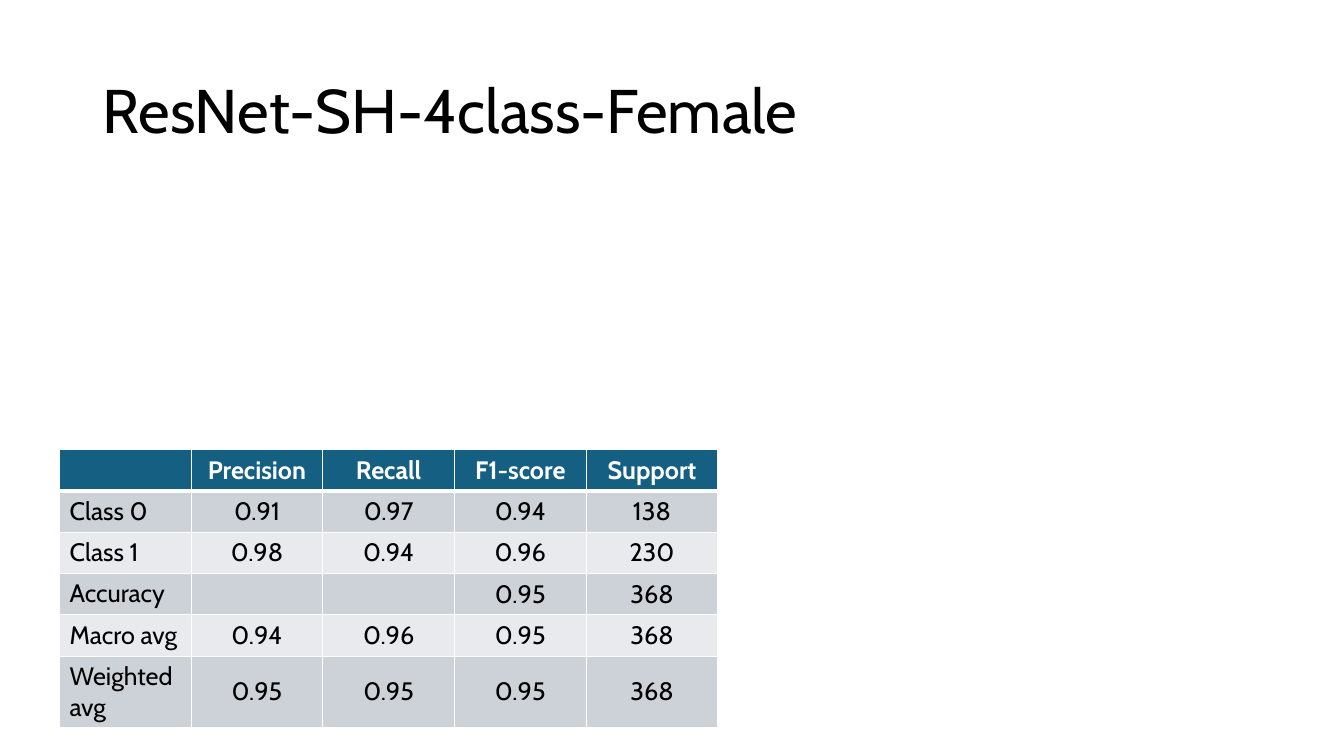
from lxml import etree
from pptx import Presentation
from pptx.dml.color import RGBColor
from pptx.enum.text import MSO_ANCHOR, MSO_AUTO_SIZE, PP_ALIGN
from pptx.oxml.ns import qn
from pptx.util import Pt

PX = 9144
LEFT, CENTER = PP_ALIGN.LEFT, PP_ALIGN.CENTER
TOP, MIDDLE = MSO_ANCHOR.TOP, MSO_ANCHOR.MIDDLE
NO_AUTOFIT = MSO_AUTO_SIZE.NONE
BLACK = RGBColor(0x00, 0x00, 0x00)
WHITE = RGBColor(0xFF, 0xFF, 0xFF)
TEAL = RGBColor(0x15, 0x60, 0x82)
GREY = RGBColor(0xCC, 0xD2, 0xD8)
PALE = RGBColor(0xE8, 0xEA, 0xED)

METRICS = [
    ["", "Precision", "Recall", "F1-score", "Support"],
    ["Class 0", "0.91", "0.97", "0.94", "138"],
    ["Class 1", "0.98", "0.94", "0.96", "230"],
    ["Accuracy", "", "", "0.95", "368"],
    ["Macro avg", "0.94", "0.96", "0.95", "368"],
    ["Weighted avg", "0.95", "0.95", "0.95", "368"],
]


def write(tf, text, font="Cabin", size=18, color=BLACK, bold=False,
          align=LEFT, spacing=1.0):
    """Write one formatted paragraph into a text frame."""
    p = tf.paragraphs[0]
    p.alignment = align
    p.line_spacing = spacing
    p.font.size = Pt(size)
    if text:
        r = p.add_run()
        r.text = text
        r.font.name = font
        r.font.size = Pt(size)
        r.font.bold = bold
        r.font.color.rgb = color


def border(cell, side, color, width):
    """Draw one edge of a table cell."""
    tcPr = cell._tc.get_or_add_tcPr()
    ln = etree.SubElement(tcPr, qn(f"a:ln{side}"), w=str(Pt(width)))
    fill = etree.SubElement(ln, qn("a:solidFill"))
    etree.SubElement(fill, qn("a:srgbClr"), val=str(color))


class Deck:
    """Hold the presentation, its style and the current slide."""

    def __init__(self, width, height):
        """Start a presentation with one title-only slide."""
        self.prs = Presentation()
        self.prs.slide_width = width * PX
        self.prs.slide_height = height * PX
        self.s = self.prs.slides.add_slide(self.prs.slide_layouts[5])

    def title(self, text, x, y, w, h):
        """Place and fill the title."""
        sp = self.s.shapes.title
        sp.left, sp.top, sp.width, sp.height = (v * PX for v in (x, y, w, h))
        tf = sp.text_frame
        tf.word_wrap = True
        tf.auto_size = NO_AUTOFIT
        tf.vertical_anchor = MIDDLE
        write(tf, text, size=44, spacing=0.9)

    def table(self, rows, x, y, w, row_h):
        """Add a banded table with a header row and row labels."""
        n, m = len(rows), len(rows[0])
        sp = self.s.shapes.add_table(n, m, x * PX, y * PX, w * PX, n * row_h * PX)
        for i, row in enumerate(rows):
            for j, text in enumerate(row):
                self.cell(sp.table.cell(i, j), text, i, j)

    def cell(self, cell, text, i, j):
        """Format one cell by its row and column."""
        header = i == 0
        for side in "LRTB":
            heavy = (i, side) in ((0, "B"), (1, "T"))
            border(cell, side, WHITE, 3 if heavy else 1)
        cell.fill.solid()
        cell.fill.fore_color.rgb = TEAL if header else GREY if i % 2 else PALE
        cell.vertical_anchor = MIDDLE if j else TOP
        write(cell.text_frame, text, color=WHITE if header else BLACK,
              bold=header, align=CENTER if j else LEFT)


def main():
    """Build and save the slide."""
    deck = Deck(1333, 750)
    deck.title("ResNet-SH-4class-Female", 92, 40, 1150, 145)
    deck.table(METRICS, 59, 446, 653, 41)
    deck.prs.save("out.pptx")


if __name__ == "__main__":
    main()
